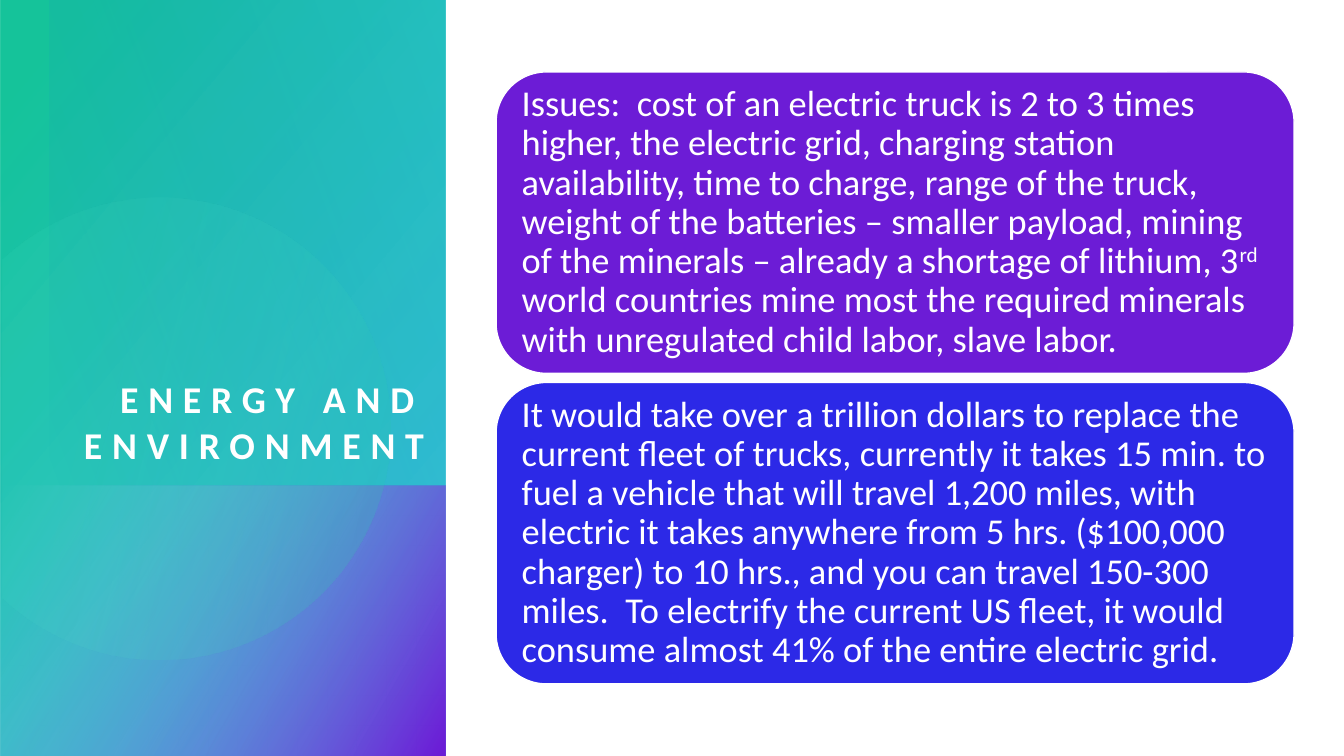
from math import cos, radians, sin

from lxml import etree
from pptx import Presentation
from pptx.dml.color import RGBColor
from pptx.enum.shapes import MSO_SHAPE
from pptx.enum.text import MSO_ANCHOR, MSO_AUTO_SIZE, PP_ALIGN
from pptx.oxml.ns import qn
from pptx.util import Pt

RECT, ROUNDED = MSO_SHAPE.RECTANGLE, MSO_SHAPE.ROUNDED_RECTANGLE
LEFT, RIGHT = PP_ALIGN.LEFT, PP_ALIGN.RIGHT
BOTTOM, MIDDLE = MSO_ANCHOR.BOTTOM, MSO_ANCHOR.MIDDLE
NO_FIT = MSO_AUTO_SIZE.NONE

COLORS = {
    "white": "FFFFFF", "green": "15C39A", "mint": "60EECC", "teal": "27BBDB",
    "sky": "7DD6E9", "blue": "1763D5", "purple": "6C1CD6", "indigo": "2C29E7",
}

# Side panel geometry, in points
PANEL_W, SLIDE_W, SLIDE_H, SPLIT_Y = 318.2, 960, 540, 346.6
SHADE_X = 35.6

# Visible box, rotation, gradient angle, stops of (position, colour, opacity)
PANELS = [
    ((0, 0, PANEL_W, SLIDE_H), 270, 50,
     [(8, "green", 100), (100, "teal", 89)]),
    ((0, SPLIT_Y, PANEL_W, SLIDE_H - SPLIT_Y), 270, 60,
     [(0, "sky", 0), (99, "purple", 100)]),
]
SHADE = ((SHADE_X, 0, PANEL_W - SHADE_X, SPLIT_Y), 90, 110,
         [(0, "teal", 29), (100, "blue", 0)])

# Each run is (text, baseline shift in percent)
ISSUES = [
    ("Issues:  cost of an electric truck is 2 to 3 times higher, the electric "
     "grid, charging station availability, time to charge, range of the truck, "
     "weight of the batteries – smaller payload, mining of the minerals – "
     "already a shortage of lithium, 3", 0),
    ("rd", 30),
    (" world countries mine most the required minerals with unregulated child "
     "labor, slave labor.", 0),
]
COSTS = [
    ("It would take over a trillion dollars to replace the current fleet of "
     "trucks, currently it takes 15 min. to fuel a vehicle that will travel "
     "1,200 miles, with electric it takes anywhere from 5 hrs. ($100,000 "
     "charger) to 10 hrs., and you can travel 150-300 miles.  To electrify the "
     "current US fleet, it would consume almost 41% of the entire electric "
     "grid.", 0),
]
CARDS = [("purple", ISSUES), ("indigo", COSTS)]
CARD_X, CARD_Y, CARD_W, CARD_H, CARD_STEP = 354.4, 51.4, 570, 215.3, 221.8


def rgb(name):
    return RGBColor.from_string(COLORS[name])


def apply(obj, values):
    for name, value in values.items():
        setattr(obj, name, value)


def fill_gradient(sp, angle, stops):
    """Fill with a clockwise linear gradient and no outline."""
    sp.shadow.inherit = False
    sp.line.fill.background()
    sp.fill.gradient()
    sp.fill.gradient_angle = 360 - angle
    for stop, (position, color, _) in zip(sp.fill.gradient_stops, stops):
        apply(stop, {"position": position / 100})
        stop.color.rgb = rgb(color)
    for clr, (_, _, opacity) in zip(sp._element.spPr.iter(qn("a:srgbClr")), stops):
        if opacity < 100:
            etree.SubElement(clr, qn("a:alpha")).set("val", str(opacity * 1000))


def add_panel(slide, box, rotation, angle, stops):
    """Add a rectangle turned by a quarter so that it covers the visible box."""
    x, y, w, h = box
    shift = (w - h) / 2
    sp = slide.shapes.add_shape(RECT, Pt(x + shift), Pt(y - shift), Pt(h), Pt(w))
    sp.rotation = rotation
    sp._element.spPr.xfrm.set("flipH", "1")
    fill_gradient(sp, angle, stops)


def add_cut_circle(slide, cx, cy, radius, half_sweep, tilt, angle, stops):
    """Add a circle whose left part is cut off by the slide edge."""
    steps = 120
    turns = [radians(tilt - half_sweep + 2 * half_sweep * i / steps)
             for i in range(steps + 1)]
    points = [(Pt(cx + radius * cos(t)), Pt(cy + radius * sin(t))) for t in turns]
    builder = slide.shapes.build_freeform(*points[0])
    builder.add_line_segments(points[1:], close=True)
    sp = builder.convert_to_shape()
    sp.rotation = 360 - tilt
    fill_gradient(sp, angle, stops)


def write_text(tf, runs, frame, paragraph, font, spacing=0):
    apply(tf, {"word_wrap": True, "auto_size": NO_FIT, **frame})
    p = tf.paragraphs[0]
    apply(p, paragraph)
    for text, baseline in runs:
        r = p.add_run()
        r.text = text
        apply(r.font, {"name": "Calibri", **font})
        r.font.color.rgb = rgb("white")
        for key, value in (("baseline", baseline * 1000), ("spc", spacing * 100)):
            if value:
                r._r.get_or_add_rPr().set(key, str(value))


def margins(size):
    return {f"margin_{side}": Pt(size) for side in ("left", "top", "right", "bottom")}


def add_card(slide, y, color, runs):
    sp = slide.shapes.add_shape(ROUNDED, Pt(CARD_X), Pt(y), Pt(CARD_W), Pt(CARD_H))
    sp.shadow.inherit = False
    sp.fill.solid()
    sp.fill.fore_color.rgb = rgb(color)
    sp.line.color.rgb = rgb("white")
    sp.line.width = Pt(1)
    write_text(sp.text_frame, runs, {"vertical_anchor": MIDDLE, **margins(7.8)},
               {"alignment": LEFT, "line_spacing": 0.9}, {"size": Pt(26)})


def place_title(slide, text):
    """Format the title placeholder and bring it in front of the panels."""
    sp = slide.shapes.title
    apply(sp, {"left": Pt(36), "top": Pt(68.4), "width": Pt(267), "height": Pt(265)})
    write_text(sp.text_frame, [(text, 0)], {"vertical_anchor": BOTTOM, **margins(0)},
               {"alignment": RIGHT}, {"size": Pt(27), "bold": True}, spacing=7)
    slide.shapes._spTree.append(sp._element)


def main():
    prs = Presentation()
    apply(prs, {"slide_width": Pt(SLIDE_W), "slide_height": Pt(SLIDE_H)})
    slide = prs.slides.add_slide(prs.slide_layouts[5])

    # Side panel
    for panel in PANELS:
        add_panel(slide, *panel)
    add_cut_circle(slide, 113.8, 302.8, 164.7, 132.9, 16.1, 30,
                   [(36, "mint", 6), (100, "green", 26)])
    add_panel(slide, *SHADE)
    place_title(slide, "ENERGY AND ENVIRONMENT")

    # Cards
    for i, (color, runs) in enumerate(CARDS):
        add_card(slide, CARD_Y + i * CARD_STEP, color, runs)

    prs.save("out.pptx")


if __name__ == "__main__":
    main()
